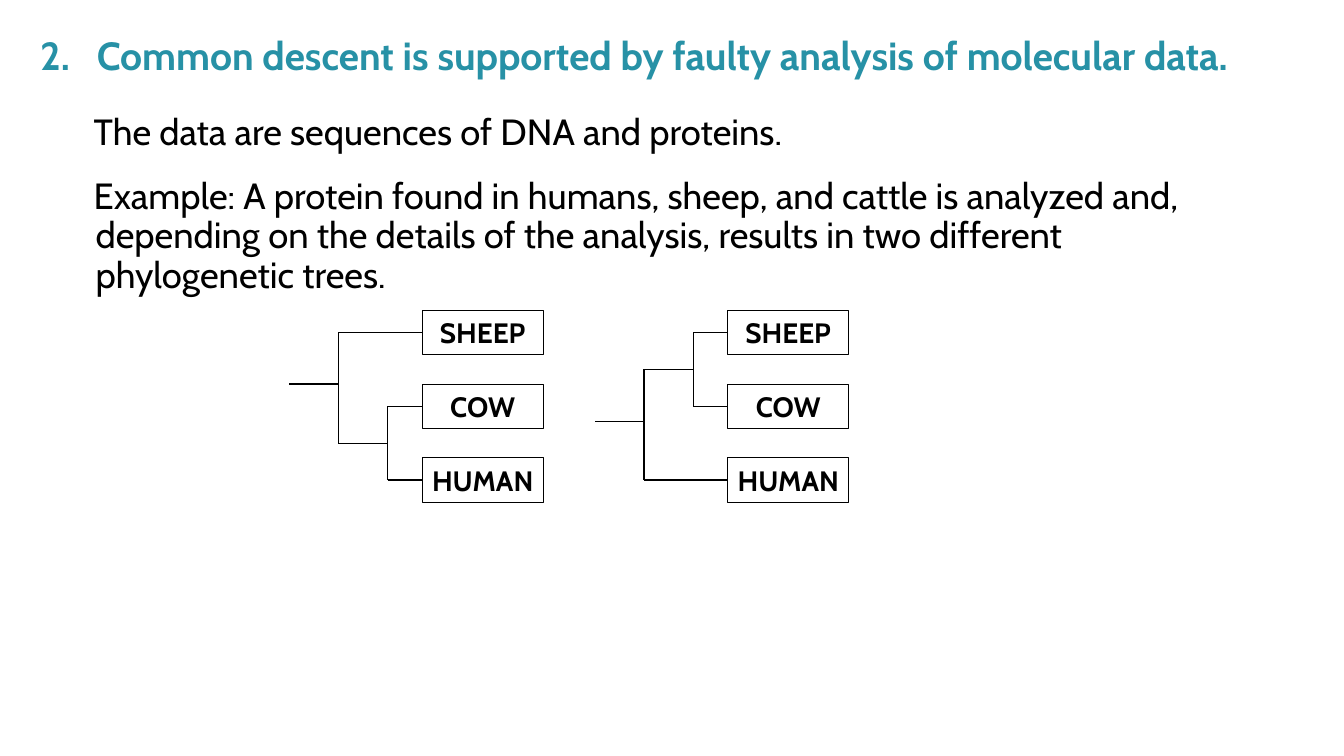
from dataclasses import dataclass

from lxml import etree
from pptx import Presentation
from pptx.dml.color import RGBColor
from pptx.enum.shapes import MSO_CONNECTOR, MSO_SHAPE
from pptx.enum.text import MSO_ANCHOR, PP_ALIGN
from pptx.oxml.ns import qn
from pptx.util import Cm, Pt

STRAIGHT = MSO_CONNECTOR.STRAIGHT
RECTANGLE = MSO_SHAPE.RECTANGLE
MIDDLE = MSO_ANCHOR.MIDDLE
CENTER = PP_ALIGN.CENTER
LEFT_SIDE = 1

TITLE = "Common descent is supported by faulty analysis of molecular data."
TITLE_NUMBER = 2
BODY = [
    "The data are sequences of DNA and proteins.",
    "Example: A protein found in humans, sheep, and cattle is analyzed and, "
    "depending on the details of the analysis, results in two different "
    "phylogenetic trees.",
]
SPECIES = ["SHEEP", "COW", "HUMAN"]
TREES = [
    {"left": 10.64, "pair": ("COW", "HUMAN"), "root": 9.68},
    {"left": 18.34, "pair": ("SHEEP", "COW"), "root": 10.62},
]

BOX_TOP, BOX_STEP = 7.82, 1.86
BOX_WIDTH, BOX_HEIGHT = 3.05, 1.12
TWIG_LENGTH, BRANCH_LENGTH = 0.87, 1.24


@dataclass(frozen=True)
class Theme:
    font: str = "Cabin"
    accent: RGBColor = RGBColor(0x27, 0x91, 0xA6)
    ink: RGBColor = RGBColor(0, 0, 0)
    title_size: int = 28
    body_size: int = 26
    label_size: int = 20
    box_line: float = 0.75
    branch_line: float = 1


THEME = Theme()


def add_run(paragraph, text, size, color, bold=False):
    run = paragraph.add_run()
    run.text = text
    run.font.name = THEME.font
    run.font.size = Pt(size)
    run.font.bold = bold
    run.font.color.rgb = color


def set_hanging_indent(paragraph, indent):
    properties = paragraph._p.get_or_add_pPr()
    properties.set("marL", str(Cm(indent)))
    properties.set("indent", str(-Cm(indent)))
    return properties


def add_text_frame(slide, left, top, width, height):
    shape = slide.shapes.add_textbox(Cm(left), Cm(top), Cm(width), Cm(height))
    shape.text_frame.word_wrap = True
    return shape.text_frame


def add_title(slide):
    paragraph = add_text_frame(slide, 0.76, 0.66, 32.41, 1.45).paragraphs[0]
    properties = set_hanging_indent(paragraph, 1.43)
    numbering = etree.SubElement(properties, qn("a:buAutoNum"))
    numbering.set("type", "arabicPeriod")
    numbering.set("startAt", str(TITLE_NUMBER))
    add_run(paragraph, TITLE, THEME.title_size, THEME.accent, bold=True)


def add_body(slide):
    frame = add_text_frame(slide, 2.11, 2.74, 28.52, 4.98)
    for index, text in enumerate(BODY):
        paragraph = frame.add_paragraph() if index else frame.paragraphs[0]
        set_hanging_indent(paragraph, 0.05)
        paragraph.line_spacing = 0.9
        paragraph.space_after = Pt(18 if index < len(BODY) - 1 else 0)
        add_run(paragraph, text, THEME.body_size, THEME.ink)


def add_species_box(group, name, left, top):
    box = group.shapes.add_shape(
        RECTANGLE, Cm(left), Cm(top), Cm(BOX_WIDTH), Cm(BOX_HEIGHT)
    )
    box.shadow.inherit = False
    box.fill.background()
    box.line.color.rgb = THEME.ink
    box.line.width = Pt(THEME.box_line)
    frame = box.text_frame
    frame.word_wrap = True
    frame.vertical_anchor = MIDDLE
    frame.margin_left = frame.margin_right = 0
    frame.paragraphs[0].alignment = CENTER
    add_run(frame.paragraphs[0], name, THEME.label_size, THEME.ink, bold=True)
    return box


def add_branch(group, start, end, box=None):
    branch = group.shapes.add_connector(
        STRAIGHT, *(Cm(value) for value in (*start, *end))
    )
    branch.line.color.rgb = THEME.ink
    branch.line.width = Pt(THEME.branch_line)
    etree.SubElement(branch._element.spPr, qn("a:effectLst"))
    if box is not None:
        branch.begin_connect(box, LEFT_SIDE)


def add_tree(slide, left, pair, root):
    group = slide.shapes.add_group_shape()
    boxes, middles = {}, {}
    for index, name in enumerate(SPECIES):
        top = BOX_TOP + index * BOX_STEP
        boxes[name] = add_species_box(group, name, left, top)
        middles[name] = top + BOX_HEIGHT / 2

    pair_x = left - TWIG_LENGTH
    trunk_x = pair_x - BRANCH_LENGTH
    root_x = trunk_x - BRANCH_LENGTH
    upper, lower = (middles[name] for name in pair)
    pair_y = (upper + lower) / 2

    for name in SPECIES:
        end_x = pair_x if name in pair else trunk_x
        y = middles[name]
        add_branch(group, (left, y), (end_x, y), boxes[name])
        if name not in pair:
            add_branch(group, (trunk_x, pair_y), (trunk_x, y))
    add_branch(group, (pair_x, lower), (pair_x, upper))
    add_branch(group, (pair_x, pair_y), (trunk_x, pair_y))
    add_branch(group, (trunk_x, root), (root_x, root))


def main():
    presentation = Presentation()
    presentation.slide_width = Cm(33.87)
    presentation.slide_height = Cm(19.05)
    slide = presentation.slides.add_slide(presentation.slide_layouts[6])
    add_title(slide)
    add_body(slide)
    for tree in TREES:
        add_tree(slide, **tree)
    presentation.save("out.pptx")


if __name__ == "__main__":
    main()
